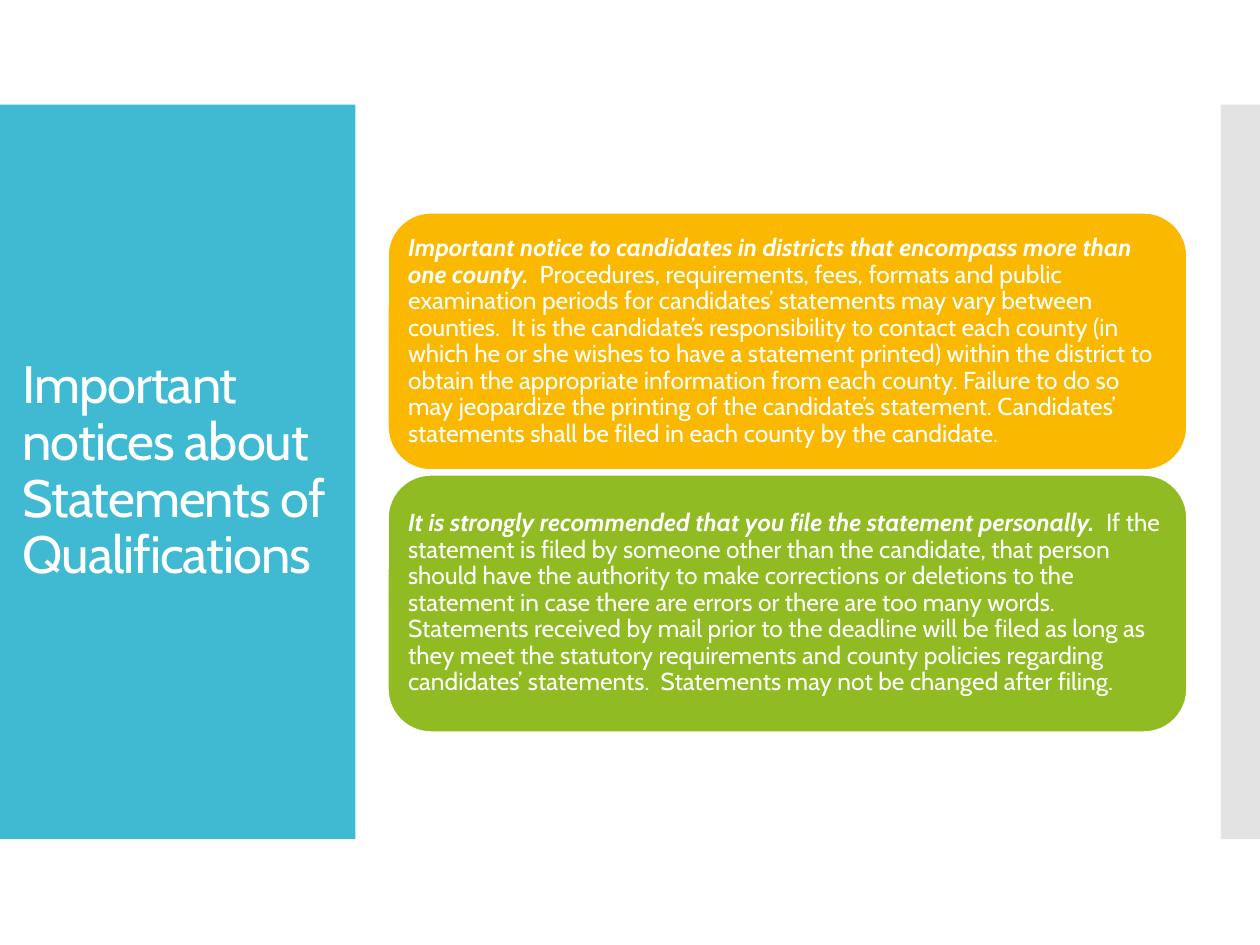
from dataclasses import dataclass

from lxml.etree import SubElement
from pptx import Presentation
from pptx.dml.color import RGBColor
from pptx.enum.shapes import MSO_SHAPE
from pptx.enum.text import MSO_ANCHOR, MSO_AUTO_SIZE, PP_ALIGN
from pptx.oxml.ns import qn
from pptx.util import Inches, Pt


@dataclass(frozen=True)
class Theme:
    font: str = "Cabin"
    title_size: int = 30
    body_size: int = 14
    white: RGBColor = RGBColor(0xFF, 0xFF, 0xFF)
    blue: RGBColor = RGBColor(0x40, 0xBA, 0xD2)
    gray: RGBColor = RGBColor(0xC8, 0xC8, 0xC8)
    yellow: RGBColor = RGBColor(0xFA, 0xB9, 0x00)
    green: RGBColor = RGBColor(0x90, 0xBB, 0x23)


theme = Theme()


def add_block(kind, left, top, width, height, color):
    block = page.shapes.add_shape(
        kind, Inches(left), Inches(top), Inches(width), Inches(height))
    block.shadow.inherit = False
    block.fill.solid()
    block.fill.fore_color.rgb = color
    block.line.fill.background()
    return block


def add_text(para, text, size, bold=False, italic=False):
    para.alignment = PP_ALIGN.LEFT
    para.line_spacing = 0.9
    span = para.add_run()
    span.text = text
    span.font.name = theme.font
    span.font.size = Pt(size)
    span.font.color.rgb = theme.white
    span.font.bold = bold
    span.font.italic = italic
    return span


deck = Presentation()
deck.slide_width, deck.slide_height = Inches(10), Inches(7.5)
page = deck.slides.add_slide(deck.slide_layouts[5])

# Side panels
add_block(MSO_SHAPE.RECTANGLE, 0, 0.83, 2.82, 5.83, theme.blue)
strip = add_block(MSO_SHAPE.RECTANGLE, 9.69, 0.83, 0.31, 5.83, theme.gray)
strip_color = strip.fill._xPr.find(".//" + qn("a:srgbClr"))
SubElement(strip_color, qn("a:alpha"), val="50000")

# Title, brought in front of the blue panel
title = page.shapes.title
page.shapes._spTree.append(title._element)
title.left, title.top = Inches(0.08), Inches(1.86)
title.width, title.height = Inches(2.65), Inches(3.77)
title.text_frame.word_wrap = True
title.text_frame.auto_size = MSO_AUTO_SIZE.NONE
title.text_frame.vertical_anchor = MSO_ANCHOR.MIDDLE
heading = add_text(title.text_frame.paragraphs[0],
                   "Important notices about Statements of Qualifications",
                   theme.title_size)
heading.font._element.set("spc", "-60")

# Notice cards
notices = [
    (theme.yellow,
     "Important notice to candidates in districts that encompass more than "
     "one county.  ",
     "Procedures, requirements, fees, formats and public examination periods "
     "for candidates’ statements may vary between counties.  It is the "
     "candidate’s responsibility to contact each county (in which he or she "
     "wishes to have a statement printed) within the district to obtain the "
     "appropriate information from each county. Failure to do so may "
     "jeopardize the printing of the candidate’s statement. Candidates’ "
     "statements shall be filed in each county by the candidate."),
    (theme.green,
     "It is strongly recommended that you file the statement personally.  ",
     "If the statement is filed by someone other than the candidate, that "
     "person should have the authority to make corrections or deletions to "
     "the statement in case there are errors or there are too many words.  "
     "Statements received by mail prior to the deadline will be filed as long "
     "as they meet the statutory requirements and county policies regarding "
     "candidates’ statements.  Statements may not be changed after filing."),
]
card_top, card_height, card_gap = 1.69, 2.04, 0.04
for index, (color, lead, detail) in enumerate(notices):
    card = add_block(MSO_SHAPE.ROUNDED_RECTANGLE, 3.08,
                     card_top + index * (card_height + card_gap),
                     6.34, card_height, color)
    card.line.color.rgb = theme.white
    card.line.width = Pt(0.85)
    frame = card.text_frame
    frame.word_wrap = True
    frame.vertical_anchor = MSO_ANCHOR.MIDDLE
    frame.margin_left = frame.margin_right = Inches(0.06)
    frame.margin_top = frame.margin_bottom = Inches(0.06)
    para = frame.paragraphs[0]
    add_text(para, lead, theme.body_size, bold=True, italic=True)
    add_text(para, detail, theme.body_size)

deck.save("out.pptx")
